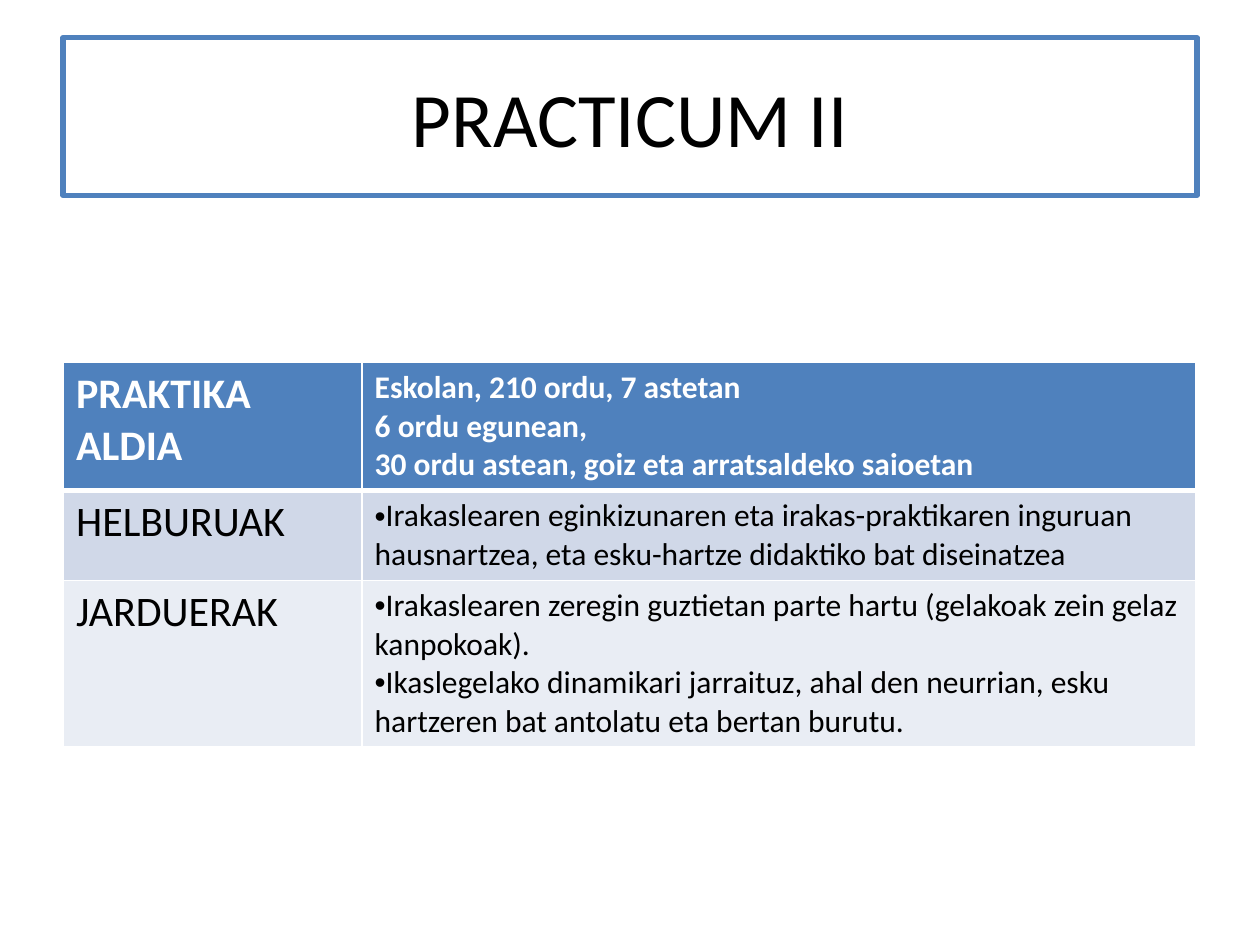
from lxml.etree import SubElement
from pptx import Presentation
from pptx.dml.color import RGBColor
from pptx.enum.shapes import MSO_SHAPE
from pptx.enum.text import MSO_ANCHOR, PP_ALIGN
from pptx.oxml.ns import qn
from pptx.util import Pt

COLORS = {
    "blue": "4F81BD",
    "band_dark": "D0D8E8",
    "band_light": "E9EDF4",
    "white": "FFFFFF",
    "black": "000000",
}
FONT = "Calibri"
COLUMN_WIDTHS = (170.64, 476.2)
SECTIONS = [
    ("PRAKTIKA ALDIA", ["Eskolan, 210 ordu, 7 astetan", "6 ordu egunean,",
                        "30 ordu astean, goiz eta arratsaldeko saioetan"], 73, "blue"),
    ("HELBURUAK", ["Irakaslearen eginkizunaren eta irakas-praktikaren inguruan "
                   "hausnartzea, eta esku-hartze didaktiko bat diseinatzea"], 51.4, "band_dark"),
    ("JARDUERAK", ["Irakaslearen zeregin guztietan parte hartu (gelakoak zein gelaz kanpokoak).",
                   "Ikaslegelako dinamikari jarraituz, ahal den neurrian, "
                   "esku hartzeren bat antolatu eta bertan burutu."], 95, "band_light"),
]


def rgb(name):
    return RGBColor.from_string(COLORS[name])


def add_run(paragraph, text, size, color, bold=False):
    run = paragraph.add_run()
    run.text = text
    run.font.name = FONT
    run.font.size = Pt(size)
    run.font.bold = bold
    run.font.color.rgb = rgb(color)


def add_bullet(paragraph):
    properties = paragraph._p.get_or_add_pPr()
    SubElement(properties, qn("a:buFont"), typeface="Arial")
    SubElement(properties, qn("a:buChar"), char="•")


def add_border(cell, side, width):
    line = SubElement(cell._tc.get_or_add_tcPr(), qn(f"a:ln{side}"), w=str(Pt(width)))
    fill = SubElement(line, qn("a:solidFill"))
    SubElement(fill, qn("a:srgbClr"), val=COLORS["white"])


def fill_cell(cell, lines, size, fill, borders, header=False, bulleted=False):
    for side, width in borders.items():
        add_border(cell, side, width)
    cell.fill.solid()
    cell.fill.fore_color.rgb = rgb(fill)
    frame = cell.text_frame
    for index, line in enumerate(lines):
        paragraph = frame.add_paragraph() if index else frame.paragraphs[0]
        if bulleted:
            add_bullet(paragraph)
        add_run(paragraph, line, size, "white" if header else "black", header)


def add_title(slide, text):
    title = slide.shapes.add_shape(MSO_SHAPE.RECTANGLE, Pt(36), Pt(21.6), Pt(648), Pt(90))
    title.shadow.inherit = False
    title.fill.background()
    title.line.color.rgb = rgb("blue")
    title.line.width = Pt(3)
    title.text_frame.word_wrap = True
    title.text_frame.vertical_anchor = MSO_ANCHOR.MIDDLE
    paragraph = title.text_frame.paragraphs[0]
    paragraph.alignment = PP_ALIGN.CENTER
    add_run(paragraph, text, 44, "black")


def add_sections(slide):
    height = sum(section[2] for section in SECTIONS)
    table = slide.shapes.add_table(len(SECTIONS), len(COLUMN_WIDTHS), Pt(36.3), Pt(207.2),
                                   Pt(sum(COLUMN_WIDTHS)), Pt(height)).table
    for column, width in zip(table.columns, COLUMN_WIDTHS):
        column.width = Pt(width)
    for index, (heading, details, row_height, fill) in enumerate(SECTIONS):
        header = index == 0
        borders = {"L": 1, "R": 1, "T": 3 if index == 1 else 1, "B": 3 if header else 1}
        table.rows[index].height = Pt(row_height)
        fill_cell(table.cell(index, 0), [heading], 24, fill, borders, header)
        fill_cell(table.cell(index, 1), details, 18, fill, borders, header, not header)


def main():
    presentation = Presentation()
    presentation.slide_width = Pt(720)
    presentation.slide_height = Pt(540)
    slide = presentation.slides.add_slide(presentation.slide_layouts[6])
    add_sections(slide)
    add_title(slide, "PRACTICUM II")
    presentation.save("out.pptx")


if __name__ == "__main__":
    main()
